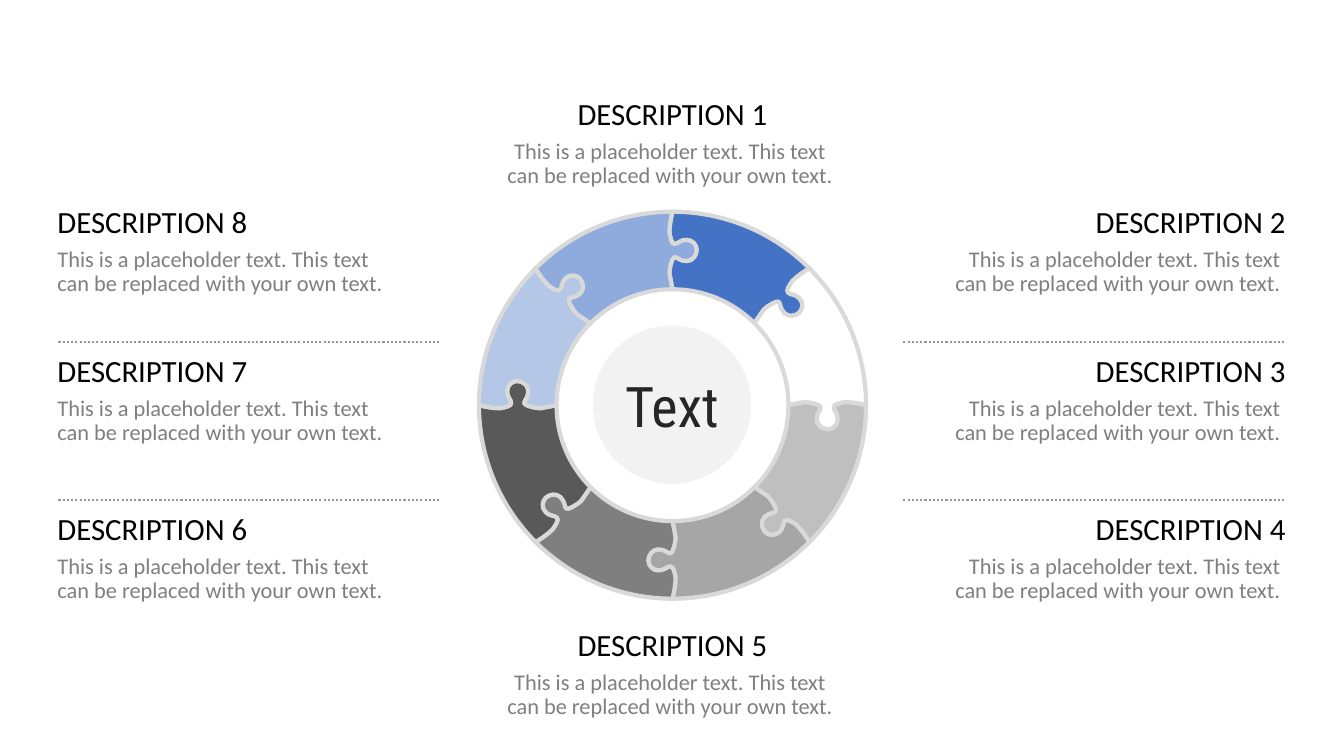
import math

import pptx
import pptx.dml.color
import pptx.enum.dml
import pptx.enum.shapes
import pptx.enum.text
import pptx.oxml
import pptx.oxml.ns
import pptx.util

PX = 9144
MID_X, MID_Y = 667, 402
OUTER, INNER = 192, 115
STEP = math.pi / 4
FILLS = ["4472C4", "FFFFFF", "BFBFBF", "A6A6A6",
         "7F7F7F", "595959", "B4C7E7", "8FAADC"]
JOINT = [
    (0, -192), (-2, -184), (-3, -177), (-3, -171),
    (-2, -166), (-1, -160), (2, -160), (6, -160), (7, -164), (14, -164),
    (20, -164), (24, -159), (24, -154), (24, -149), (20, -143), (14, -143),
    (7, -143), (5, -147), (2, -147), (0, -147), (-3, -137), (-3, -131),
    (-2, -125), (0, -115), (0, -115),
]
LEFT = pptx.enum.text.PP_ALIGN.LEFT
MID = pptx.enum.text.PP_ALIGN.CENTER
RIGHT = pptx.enum.text.PP_ALIGN.RIGHT
LABELS = [
    (489, 94, MID), (919, 201, RIGHT), (919, 349, RIGHT), (919, 506, RIGHT),
    (489, 621, MID), (57, 506, LEFT), (57, 349, LEFT), (57, 201, LEFT),
]


def emu(px):
    """Turn px into EMU."""
    return pptx.util.Emu(round(px * PX))


def node(tag):
    """Make an empty drawing element."""
    return pptx.oxml.parse_xml(f"<a:{tag} {pptx.oxml.ns.nsdecls('a')}/>")


def shade(code):
    """Turn a hex string into a colour."""
    return pptx.dml.color.RGBColor.from_string(code)


def paint(fill, code):
    """Make a fill solid in one colour."""
    fill.solid()
    fill.fore_color.rgb = shade(code)


def write(para, text, size, font, code):
    """Add one styled run to a paragraph."""
    run = para.add_run()
    run.text = text
    run.font.size = pptx.util.Pt(size)
    run.font.name = font
    run.font.color.rgb = shade(code)


def spin(pts, turn):
    """Rotate points clockwise about the ring centre."""
    s, c = math.sin(turn), math.cos(turn)
    return [(x * c - y * s, x * s + y * c) for x, y in pts]


def arc(size, start):
    """Give the cubic curve of one clockwise ring step."""
    pull = size * 4 / 3 * math.tan(STEP / 4)
    first = spin([(0, -size), (pull, -size)], start)
    return first + spin([(-pull, -size), (0, -size)], start + STEP)


def curve(shape):
    """Turn each three straight segments into one cubic curve."""
    lines = shape._element.xpath(".//a:lnTo")
    for i in range(0, len(lines), 3):
        bend = node("cubicBezTo")
        lines[i].addprevious(bend)
        for line in lines[i:i + 3]:
            bend.append(line[0])
            line.getparent().remove(line)


def piece(slide, spot, code):
    """Draw one puzzle piece of the ring."""
    turn = spot * STEP
    pts = (spin(JOINT, turn) + arc(INNER, turn)[1:]
           + spin(JOINT, turn + STEP)[-2::-1] + arc(OUTER, turn)[-2::-1])
    pts = [(emu(MID_X + x), emu(MID_Y + y)) for x, y in pts]
    pen = slide.shapes.build_freeform(*pts[0])
    pen.add_line_segments(pts[1:], close=True)
    shape = pen.convert_to_shape()
    curve(shape)
    shape.shadow.inherit = False
    paint(shape.fill, code)
    paint(shape.line.fill, "D9D9D9")
    shape.line.width = pptx.util.Pt(3)


def hub(slide):
    """Draw the captioned disc in the middle."""
    disc = slide.shapes.add_shape(
        pptx.enum.shapes.MSO_SHAPE.OVAL,
        emu(588), emu(323), emu(157), emu(157))
    disc.shadow.inherit = False
    paint(disc.fill, "F2F2F2")
    disc.line.fill.background()
    frame = disc.text_frame
    frame.word_wrap = False
    frame.vertical_anchor = pptx.enum.text.MSO_ANCHOR.MIDDLE
    para = frame.paragraphs[0]
    para.alignment = MID
    write(para, "Text", 40, "Roboto Condensed", "262626")


def label(slide, num, left, top, align):
    """Write a numbered heading and its two lines of text."""
    box = slide.shapes.add_textbox(emu(left), emu(top), emu(356), emu(94))
    frame = box.text_frame
    frame.word_wrap = True
    frame.auto_size = pptx.enum.text.MSO_AUTO_SIZE.SHAPE_TO_FIT_TEXT
    frame.margin_left = frame.margin_right = 0
    frame.margin_top = frame.margin_bottom = 0
    head, body = frame.paragraphs[0], frame.add_paragraph()
    for para in (head, body):
        para.alignment = align
        para.space_after = pptx.util.Pt(6)
    body.line_spacing = 0.9
    write(head, f"DESCRIPTION {num}", 22, "Calibri", "000000")
    end = "" if align == LEFT else " "
    write(body, "This is a placeholder text. This text ", 16, "Calibri", "7F7F7F")
    body.add_line_break()
    write(body, "can be replaced with your own text." + end, 16, "Calibri", "7F7F7F")


def rule(slide, left, top):
    """Draw a dotted line between labels."""
    line = slide.shapes.add_connector(
        pptx.enum.shapes.MSO_CONNECTOR.STRAIGHT,
        emu(left), emu(top), emu(left + 378), emu(top))
    paint(line.line.fill, "969696")
    line.line.width = pptx.util.Pt(1.5)
    line.line.dash_style = pptx.enum.dml.MSO_LINE.ROUND_DOT
    line._element.spPr.append(node("effectLst"))


def main():
    """Build and save the puzzle ring slide."""
    deck = pptx.Presentation()
    deck.slide_width, deck.slide_height = emu(1333), emu(750)
    slide = deck.slides.add_slide(deck.slide_layouts[6])
    for spot, code in enumerate(FILLS):
        piece(slide, spot, code)
    hub(slide)
    for num, place in enumerate(LABELS, 1):
        label(slide, num, *place)
    for left in (58, 896):
        for top in (339, 496):
            rule(slide, left, top)
    deck.save("out.pptx")


if __name__ == "__main__":
    main()
